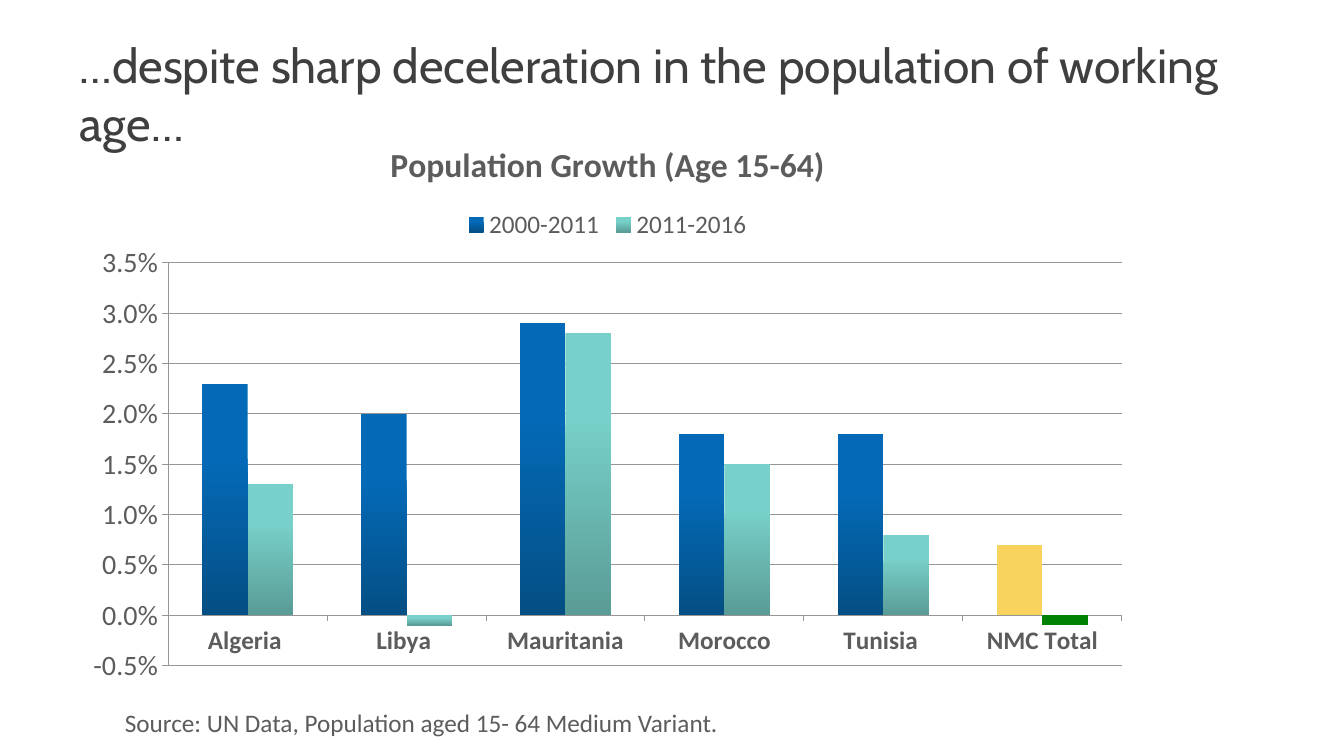
from dataclasses import dataclass

from lxml import etree
from pptx import Presentation
from pptx.chart.chart import Chart
from pptx.chart.data import CategoryChartData as Data
from pptx.dml.color import RGBColor
from pptx.dml.fill import FillFormat as Fill
from pptx.enum.chart import XL_CHART_TYPE as Kind, XL_LEGEND_POSITION as Place, XL_TICK_MARK as Tick
from pptx.enum.text import MSO_ANCHOR as Anchor
from pptx.oxml.ns import qn
from pptx.slide import Slide
from pptx.text.text import Font
from pptx.util import Inches, Pt

WIDE, HIGH = Inches(13.33), Inches(7.5)
GRAY, RULE = "5C5C5C", "969696"
LANDS = ["Algeria ", "Libya ", "Mauritania", "Morocco", "Tunisia ", "NMC Total"]


@dataclass(frozen=True)
class Area:
    """Hold a frame as percentages of the slide."""
    left: float
    top: float
    width: float
    height: float

    def box(self) -> tuple[int, int, int, int]:
        """Turn the shares into lengths."""
        return (int(WIDE * self.left / 100), int(HIGH * self.top / 100),
                int(WIDE * self.width / 100), int(HIGH * self.height / 100))


@dataclass(frozen=True)
class Label:
    """Describe one line of slide text."""
    text: str
    area: Area
    size: float
    face: str
    hue: str
    wrap: bool
    anchor: Anchor
    pad: tuple[float, float]


@dataclass(frozen=True)
class Span:
    """Describe the growth rates of one period."""
    name: str
    rates: tuple[float, ...]
    light: str
    dark: str
    total: str


LABELS = [
    Label("…despite sharp deceleration in the population of working age…",
          Area(5.03, 4, 90, 16.67), 34.2, "Cabin", "3F3F3F", True, Anchor.MIDDLE, (0.12, 0.06)),
    Label("Source: UN Data, Population aged 15- 64 Medium Variant.",
          Area(8.55, 92.93, 46.14, 5.33), 18, "Calibri", GRAY, False, Anchor.TOP, (0.1, 0.05)),
]
SPANS = [
    Span("2000-2011", (0.023, 0.02, 0.029, 0.018, 0.018, 0.007), "046AB8", "044F84", "F8D35E"),
    Span("2011-2016", (0.013, -0.001, 0.028, 0.015, 0.008, -0.001), "77D0C9", "5A9C96", "008000"),
]
FRAME = Area(5.33, 15.73, 79.74, 76.13)
PLOT = {"x": 0.09, "y": 0.25, "w": 0.89, "h": 0.7}


def tint(code: str) -> RGBColor:
    """Read a hex colour."""
    return RGBColor.from_string(code)


def style(font: Font, size: float, face: str = "Calibri", hue: str = GRAY, bold: bool = False) -> None:
    """Set the look of a font."""
    font.size, font.name, font.bold = Pt(size), face, bold
    font.color.rgb = tint(hue)


def write(slide: Slide, label: Label) -> None:
    """Place one label on the slide."""
    frame = slide.shapes.add_textbox(*label.area.box()).text_frame
    frame.word_wrap, frame.vertical_anchor = label.wrap, label.anchor
    frame.margin_left = frame.margin_right = Inches(label.pad[0])
    frame.margin_top = frame.margin_bottom = Inches(label.pad[1])
    run = frame.paragraphs[0].add_run()
    run.text = label.text
    style(run.font, label.size, label.face, label.hue)


def shade(fill: Fill, span: Span) -> None:
    """Fill bars from light at the top to dark at the foot."""
    fill.gradient()
    fill.gradient_angle = 270
    for stop, hue, spot in zip(fill.gradient_stops, (span.light, span.dark), (0.3, 1)):
        stop.color.rgb, stop.position = tint(hue), spot


def fit(chart: Chart) -> None:
    """Fix the inner plot area within the chart."""
    plot = chart._chartSpace.chart.plotArea
    for old in plot.findall(qn("c:layout")):
        plot.remove(old)
    layout = etree.Element(qn("c:layout"))
    manual = etree.SubElement(layout, qn("c:manualLayout"))
    parts = {"layoutTarget": "inner", "xMode": "edge", "yMode": "edge", **PLOT}
    for tag, val in parts.items():
        etree.SubElement(manual, qn(f"c:{tag}")).set("val", str(val))
    plot.insert(0, layout)


def trim(chart: Chart) -> None:
    """Style the title, legend and axes."""
    style(chart.font, 10)
    chart.has_title = True
    run = chart.chart_title.text_frame.paragraphs[0].add_run()
    run.text = "Population Growth (Age 15-64)"
    style(run.font, 24, bold=True)
    chart.has_legend = True
    chart.legend.position, chart.legend.include_in_layout = Place.TOP, False
    style(chart.legend.font, 18)
    for axis, size, bold in ((chart.category_axis, 18, True), (chart.value_axis, 20, False)):
        axis.major_tick_mark, axis.minor_tick_mark = Tick.OUTSIDE, Tick.NONE
        style(axis.tick_labels.font, size, bold=bold)
        axis.format.line.color.rgb = tint(RULE)
    scale = chart.value_axis
    scale.minimum_scale, scale.maximum_scale, scale.major_unit = -0.005, 0.035, 0.005
    scale.tick_labels.number_format, scale.tick_labels.number_format_is_linked = "0.0%", False
    scale.major_gridlines.format.line.color.rgb = tint(RULE)


def graph(slide: Slide) -> None:
    """Draw the population growth chart."""
    data = Data(number_format="0.0%")
    data.categories = LANDS
    for span in SPANS:
        data.add_series(span.name, span.rates)
    chart = slide.shapes.add_chart(Kind.COLUMN_CLUSTERED, *FRAME.box(), data).chart
    trim(chart)
    fit(chart)
    plot = chart.plots[0]
    plot.gap_width, plot.overlap, plot.vary_by_categories = 150, 0, False
    for bars, span in zip(plot.series, SPANS):
        bars.invert_if_negative = False
        shade(bars.format.fill, span)
        total = bars.points[len(LANDS) - 1].format.fill
        total.solid()
        total.fore_color.rgb = tint(span.total)


def main() -> None:
    """Build and save the slide."""
    deck = Presentation()
    deck.slide_width, deck.slide_height = WIDE, HIGH
    slide = deck.slides.add_slide(deck.slide_layouts[6])
    graph(slide)
    for label in LABELS:
        write(slide, label)
    deck.save("out.pptx")


if __name__ == "__main__":
    main()
